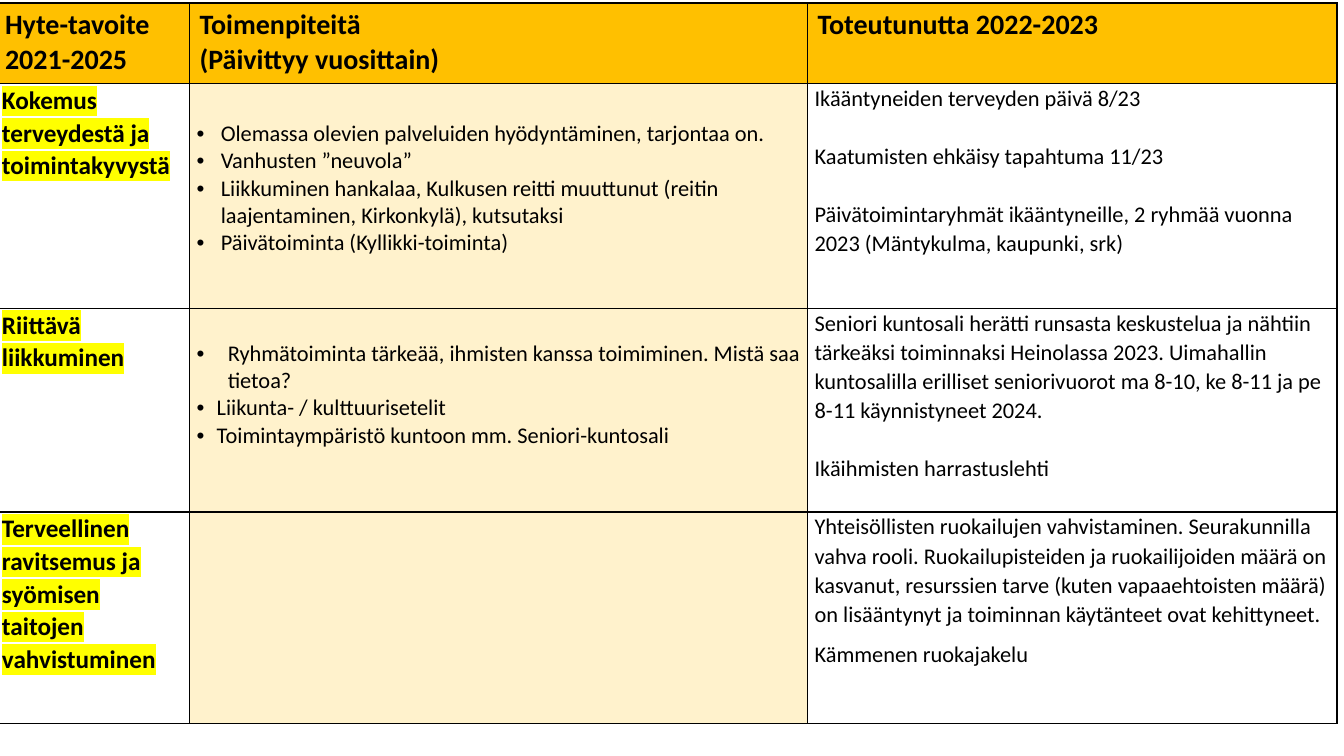
from dataclasses import dataclass

from lxml import etree
from pptx import Presentation
from pptx.dml.color import RGBColor
from pptx.enum.text import MSO_ANCHOR
from pptx.oxml.ns import qn
from pptx.util import Inches, Pt

TOP = MSO_ANCHOR.TOP
BLANK_LAYOUT = 6


@dataclass(frozen=True)
class Theme:
    font: str = "Calibri"
    ink: str = "000000"
    header_fill: str = "FFC000"
    action_fill: str = "FFF2CC"
    plain_fill: str = "FFFFFF"
    marker: str = "FFFF00"
    header_size: int = 20
    goal_size: int = 18
    body_size: int = 16
    line_spacing: float = 1.06
    paragraph_gap: int = 8
    blank_line_gap: float = 20.7
    border_width: int = 1


THEME = Theme()
TABLE_BOX = (-0.05, 0.03, 13.31, 7.15)
COLUMNS = (1.93, 6.13, 5.25)
ROWS = (0.8, 2.23, 2.02, 2.1)
HEADER_MARGINS = (0.1, 0.05, 0.1, 0.05)
BODY_MARGINS = (0.07, 0, 0.07, 0)

HEADERS = (
    ["Hyte-tavoite 2021-2025"],
    ["Toimenpiteitä", "(Päivittyy vuosittain)"],
    ["Toteutunutta 2022-2023"],
)

GOALS = (
    {
        "goal": "Kokemus terveydestä ja toimintakyvystä",
        "actions": [
            ("Olemassa olevien palveluiden hyödyntäminen, tarjontaa on.", 0.24),
            ("Vanhusten ”neuvola”", 0.24),
            ("Liikkuminen hankalaa, Kulkusen reitti muuttunut (reitin "
             "laajentaminen, Kirkonkylä), kutsutaksi", 0.24),
            ("Päivätoiminta (Kyllikki-toiminta)", 0.24),
        ],
        "actions_top": 0.36,
        "results": [
            "Ikääntyneiden terveyden päivä 8/23",
            "Kaatumisten ehkäisy tapahtuma 11/23",
            "Päivätoimintaryhmät ikääntyneille, 2 ryhmää vuonna 2023 "
            "(Mäntykulma, kaupunki, srk)",
        ],
        "results_gap": THEME.blank_line_gap,
    },
    {
        "goal": "Riittävä liikkuminen",
        "actions": [
            ("Ryhmätoiminta tärkeää, ihmisten kanssa toimiminen. "
             "Mistä saa tietoa?", 0.31),
            ("Liikunta- / kulttuurisetelit", 0.2),
            ("Toimintaympäristö kuntoon mm. Seniori-kuntosali", 0.2),
        ],
        "actions_top": 0.31,
        "results": [
            "Seniori kuntosali herätti runsasta keskustelua ja nähtiin "
            "tärkeäksi toiminnaksi Heinolassa 2023. Uimahallin kuntosalilla "
            "erilliset seniorivuorot ma 8-10, ke 8-11 ja pe 8-11 "
            "käynnistyneet 2024.",
            "Ikäihmisten harrastuslehti",
        ],
        "results_gap": THEME.blank_line_gap,
    },
    {
        "goal": "Terveellinen ravitsemus ja syömisen taitojen vahvistuminen",
        "actions": [],
        "actions_top": 0,
        "results": [
            "Yhteisöllisten ruokailujen vahvistaminen. Seurakunnilla vahva "
            "rooli. Ruokailupisteiden ja ruokailijoiden määrä on kasvanut, "
            "resurssien tarve (kuten vapaaehtoisten määrä) on lisääntynyt ja "
            "toiminnan käytänteet ovat kehittyneet.",
            "Kämmenen ruokajakelu",
        ],
        "results_gap": THEME.paragraph_gap,
    },
)


def apply_format(target, values):
    for name, value in values.items():
        setattr(target, name, value)


def add_color(parent, tag, color):
    holder = etree.SubElement(parent, qn(tag))
    etree.SubElement(holder, qn("a:srgbClr"), val=color)
    return holder


def draw_borders(cell):
    properties = cell._tc.get_or_add_tcPr()
    for position, side in enumerate(("a:lnL", "a:lnR", "a:lnT", "a:lnB")):
        line = etree.Element(qn(side), w=str(Pt(THEME.border_width)))
        add_color(line, "a:solidFill", THEME.ink)
        properties.insert(position, line)


def style_cell(cell, fill, margins):
    left, top, right, bottom = map(Inches, margins)
    apply_format(cell, {
        "margin_left": left, "margin_top": top,
        "margin_right": right, "margin_bottom": bottom,
        "vertical_anchor": TOP,
    })
    cell.fill.solid()
    cell.fill.fore_color.rgb = RGBColor.from_string(fill)
    draw_borders(cell)


def write_paragraphs(cell, texts, size, bold=False, spacing=1.0, gap=0):
    frame = cell.text_frame
    for index, text in enumerate(texts):
        para = frame.paragraphs[0] if index == 0 else frame.add_paragraph()
        apply_format(para, {
            "line_spacing": spacing, "space_before": Pt(0), "space_after": Pt(gap),
        })
        span = para.add_run()
        span.text = text
        apply_format(span.font, {"name": THEME.font, "size": Pt(size), "bold": bold})
        span.font.color.rgb = RGBColor.from_string(THEME.ink)
    return frame.paragraphs


def highlight(span):
    properties = span._r.get_or_add_rPr()
    marker = add_color(properties, "a:highlight", THEME.marker)
    properties.find(qn("a:solidFill")).addnext(marker)


def add_bullet(para, indent):
    properties = para._p.get_or_add_pPr()
    properties.set("marL", str(Inches(indent)))
    properties.set("indent", str(-Inches(indent)))
    etree.SubElement(properties, qn("a:buFont"), typeface="Arial")
    etree.SubElement(properties, qn("a:buChar"), char="•")


def fill_header(cells):
    for cell, texts in zip(cells, HEADERS):
        style_cell(cell, THEME.header_fill, HEADER_MARGINS)
        write_paragraphs(cell, texts, THEME.header_size, bold=True)


def fill_goal(cell, entry):
    style_cell(cell, THEME.plain_fill, BODY_MARGINS)
    paras = write_paragraphs(cell, [entry["goal"]], THEME.goal_size, True,
                             THEME.line_spacing, THEME.paragraph_gap)
    highlight(paras[0].runs[0])


def fill_actions(cell, entry):
    left, _, right, bottom = BODY_MARGINS
    style_cell(cell, THEME.action_fill, (left, entry["actions_top"], right, bottom))
    texts = [text for text, _ in entry["actions"]]
    paras = write_paragraphs(cell, texts, THEME.body_size)
    for para, (_, indent) in zip(paras, entry["actions"]):
        add_bullet(para, indent)


def fill_results(cell, entry):
    style_cell(cell, THEME.plain_fill, BODY_MARGINS)
    write_paragraphs(cell, entry["results"], THEME.body_size,
                     spacing=THEME.line_spacing, gap=entry["results_gap"])


def add_goal_table(page, box):
    left, top, width, height = box
    frame = page.shapes.add_table(len(ROWS), len(COLUMNS), *map(Inches, box))
    table = frame.table
    apply_format(table, {"first_row": False, "horz_banding": False})
    for column, share in zip(table.columns, COLUMNS):
        column.width = Inches(width * share / sum(COLUMNS))
    for row, share in zip(table.rows, ROWS):
        row.height = Inches(height * share / sum(ROWS))
    fill_header(table.rows[0].cells)
    for number, entry in enumerate(GOALS, start=1):
        for column, fill in enumerate((fill_goal, fill_actions, fill_results)):
            fill(table.cell(number, column), entry)


def main():
    deck = Presentation()
    apply_format(deck, {"slide_width": Inches(13.33), "slide_height": Inches(7.5)})
    page = deck.slides.add_slide(deck.slide_layouts[BLANK_LAYOUT])
    add_goal_table(page, TABLE_BOX)
    deck.save("out.pptx")


if __name__ == "__main__":
    main()
